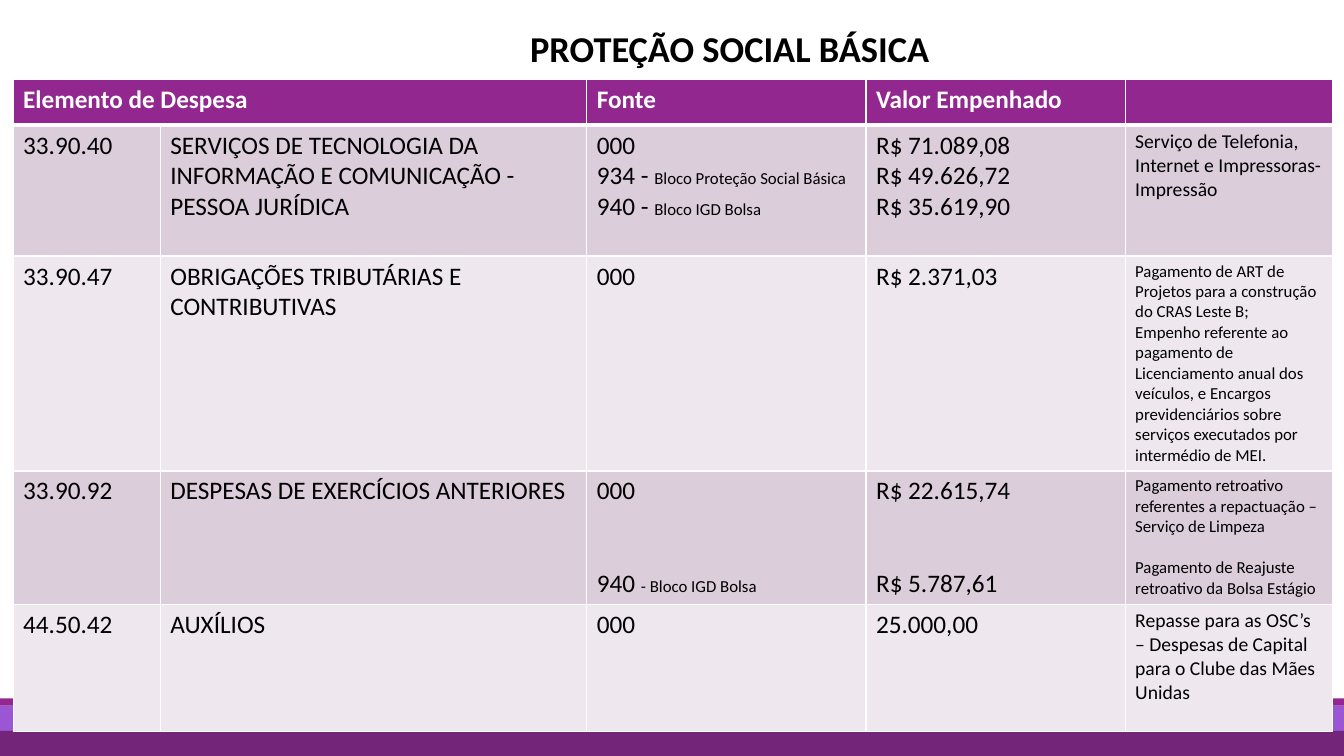
from pptx import Presentation
from pptx.dml.color import RGBColor
from pptx.enum.shapes import MSO_SHAPE as SHAPE
from pptx.enum.text import MSO_ANCHOR as ANCHOR, PP_ALIGN as ALIGN
from pptx.oxml.ns import qn
from pptx.util import Inches, Pt
from lxml.etree import SubElement

FONT = "Calibri"
PURPLE, WHITE, BLACK = "92278F", "FFFFFF", "000000"
BANDS = ["DCCDDB", "EEE8EE"]
BODY_SIZE, NOTE_SIZE = 18, 12

COL_WIDTHS = [1.46, 4.23, 2.77, 2.57, 2.06]
ROW_HEIGHTS = [0.45, 1.3, 2.1, 1.3, 1.26]
HEADERS = ["Elemento de Despesa", "", "Fonte", "Valor Empenhado", ""]

# Code, description, sources, amounts, details, detail size,
# and the space in points before the last source/amount and last detail.
# In a source, the part after "|" is a small note.
EXPENSES = [
    ("33.90.40",
     "SERVIÇOS DE TECNOLOGIA DA INFORMAÇÃO E COMUNICAÇÃO - PESSOA JURÍDICA",
     ["000", "934 - |Bloco Proteção Social Básica", "940 - |Bloco IGD Bolsa"],
     ["R$ 71.089,08", "R$ 49.626,72", "R$ 35.619,90"],
     ["Serviço de Telefonia, Internet e Impressoras-Impressão"], 14, 0, 0),
    ("33.90.47", "OBRIGAÇÕES TRIBUTÁRIAS E CONTRIBUTIVAS",
     ["000"], ["R$ 2.371,03"],
     ["Pagamento de ART de Projetos para a construção do CRAS Leste B;",
      "Empenho referente ao pagamento de Licenciamento anual dos veículos, "
      "e Encargos previdenciários sobre serviços executados por "
      "intermédio de MEI."], 12, 0, 0),
    ("33.90.92", "DESPESAS DE EXERCÍCIOS ANTERIORES",
     ["000", "940 |- Bloco IGD Bolsa"], ["R$ 22.615,74", "R$ 5.787,61"],
     ["Pagamento retroativo referentes a repactuação – Serviço de Limpeza",
      "Pagamento de Reajuste retroativo da Bolsa Estágio"], 12, 44, 14.6),
    ("44.50.42", "AUXÍLIOS", ["000"], ["25.000,00"],
     ["Repasse para as OSC’s – Despesas de Capital para o Clube das Mães "
      "Unidas"], 14, 0, 0),
]


def rgb(color):
    return RGBColor.from_string(color)


def format_run(r, size, color=BLACK, bold=False):
    r.font.name, r.font.size, r.font.bold = FONT, Pt(size), bold
    r.font.color.rgb = rgb(color)


def add_bar(s, top, height, color, alpha=None):
    sp = s.shapes.add_shape(SHAPE.RECTANGLE, 0, Inches(top),
                            Inches(13.33), Inches(height))
    sp.shadow.inherit = False
    sp.fill.solid()
    sp.fill.fore_color.rgb = rgb(color)
    sp.line.fill.background()
    if alpha:
        clr = sp.fill._xPr.find(qn("a:solidFill"))[0]
        SubElement(clr, qn("a:alpha"), val=str(alpha * 1000))


def set_title(s, text):
    sp = s.shapes.title
    sp.left, sp.top = Inches(5), Inches(0.21)
    sp.width, sp.height = Inches(4.48), Inches(0.54)
    tf = sp.text_frame
    tf.text = text
    tf.word_wrap = True
    tf.vertical_anchor = ANCHOR.TOP
    p = tf.paragraphs[0]
    p.alignment = ALIGN.CENTER
    format_run(p.runs[0], 26, bold=True)


def style_cell(cell, fill, top=1, bottom=1):
    tc_pr = cell._tc.get_or_add_tcPr()
    for side, width in (("L", 1), ("R", 1), ("T", top), ("B", bottom)):
        ln = SubElement(tc_pr, qn(f"a:ln{side}"), w=str(Pt(width)))
        line_fill = SubElement(ln, qn("a:solidFill"))
        SubElement(line_fill, qn("a:srgbClr"), val=WHITE)
    cell.fill.solid()
    cell.fill.fore_color.rgb = rgb(fill)


def fill_cell(cell, lines, size=BODY_SIZE, gap=0):
    tf = cell.text_frame
    for i, line in enumerate(lines):
        p = tf.add_paragraph() if i else tf.paragraphs[0]
        for part, run_size in zip(line.split("|"), (size, NOTE_SIZE)):
            r = p.add_run()
            r.text = part
            format_run(r, run_size)
    if gap:
        p.space_before = Pt(gap)


def add_expense_table(s):
    table = s.shapes.add_table(
        len(ROW_HEIGHTS), len(COL_WIDTHS), Inches(0.13), Inches(0.79),
        Inches(sum(COL_WIDTHS)), Inches(sum(ROW_HEIGHTS))).table
    for col, width in zip(table.columns, COL_WIDTHS):
        col.width = Inches(width)
    for row, height in zip(table.rows, ROW_HEIGHTS):
        row.height = Inches(height)

    # Header row
    for cell, text in zip(table.rows[0].cells, HEADERS):
        style_cell(cell, PURPLE, bottom=3)
        if text:
            cell.text_frame.text = text
            format_run(cell.text_frame.paragraphs[0].runs[0],
                       BODY_SIZE, WHITE, True)
    table.cell(0, 0).merge(table.cell(0, 1))

    # Expense rows
    for i, expense in enumerate(EXPENSES):
        code, name, sources, amounts, details, size, gap, detail_gap = expense
        cells = list(table.rows[i + 1].cells)
        for cell in cells:
            style_cell(cell, BANDS[i % 2], top=1 if i else 3)
        fill_cell(cells[0], [code])
        fill_cell(cells[1], [name])
        fill_cell(cells[2], sources, gap=gap)
        fill_cell(cells[3], amounts, gap=gap)
        fill_cell(cells[4], details, size, detail_gap)


def main():
    prs = Presentation()
    prs.slide_width, prs.slide_height = Inches(13.33), Inches(7.5)
    s = prs.slides.add_slide(prs.slide_layouts[5])

    # Footer bars
    add_bar(s, 7, 0.5, "9B57D3")
    add_bar(s, 6.93, 0.07, PURPLE)
    add_bar(s, 7.25, 0.25, "6D1D6B", alpha=85)

    # Title and table
    set_title(s, "PROTEÇÃO SOCIAL BÁSICA")
    add_expense_table(s)
    prs.save("out.pptx")


if __name__ == "__main__":
    main()
